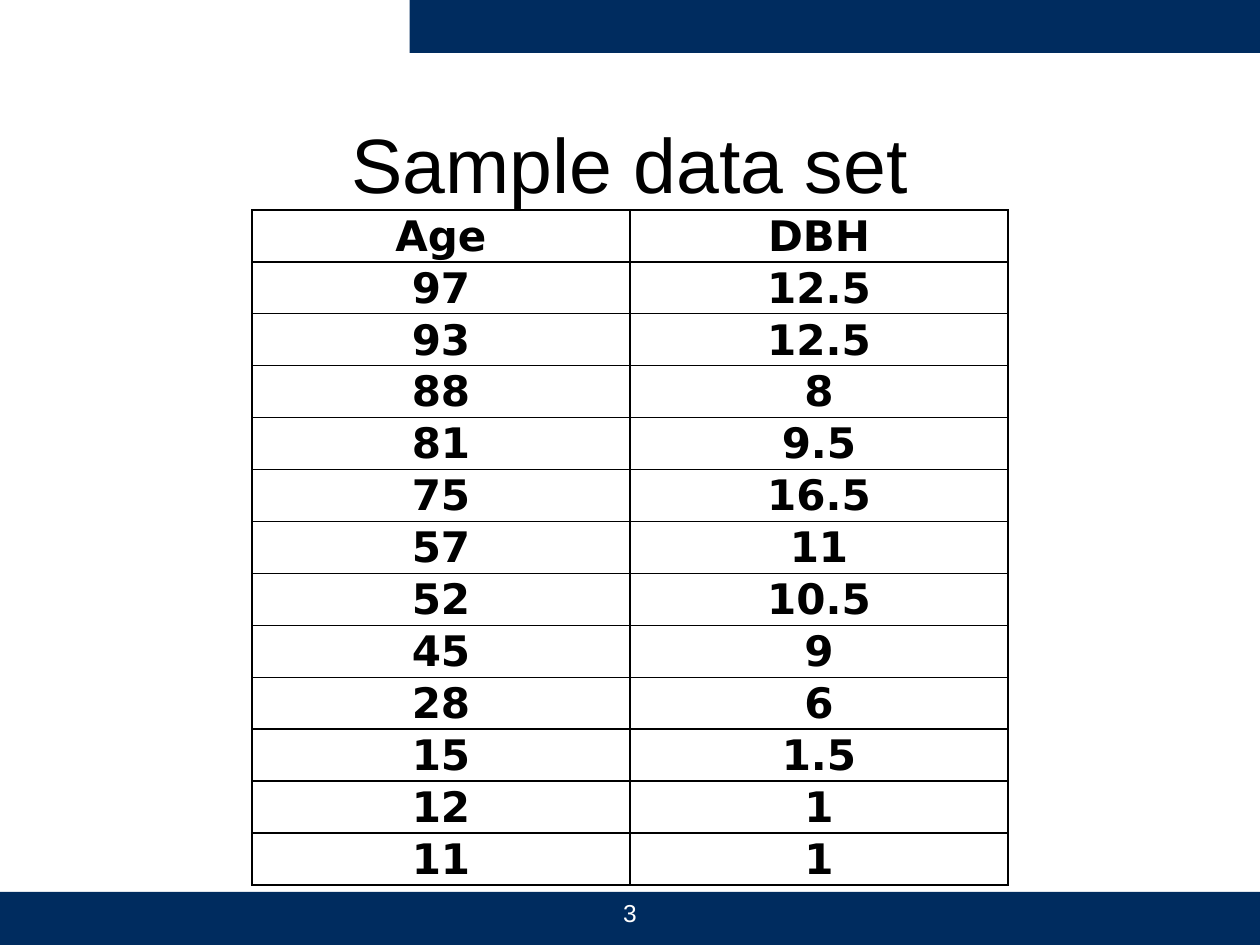
from dataclasses import dataclass

import pptx
import pptx.dml.color
import pptx.enum.shapes
import pptx.enum.text
import pptx.oxml
import pptx.oxml.ns
import pptx.util
from pptx.dml.color import RGBColor
from pptx.util import Cm

NAVY = RGBColor(0x00, 0x2C, 0x5F)
BLACK = RGBColor(0x00, 0x00, 0x00)
WHITE = RGBColor(0xFF, 0xFF, 0xFF)

SLIDE_W, SLIDE_H = Cm(25.4), Cm(19.05)
BAND_H = Cm(1.07)
COL_W, ROW_H = Cm(7.62), Cm(1.02)

SAMPLES = [
    ("Age", "DBH"),
    ("97", "12.5"),
    ("93", "12.5"),
    ("88", "8"),
    ("81", "9.5"),
    ("75", "16.5"),
    ("57", "11"),
    ("52", "10.5"),
    ("45", "9"),
    ("28", "6"),
    ("15", "1.5"),
    ("12", "1"),
    ("11", "1"),
]


@dataclass
class Band:
    left: int
    top: int
    width: int


BANDS = [
    Band(Cm(8.26), 0, SLIDE_W - Cm(8.26)),
    Band(0, SLIDE_H - BAND_H, SLIDE_W),
]


def draw_band(s, band: Band) -> None:
    sp = s.shapes.add_shape(pptx.enum.shapes.MSO_SHAPE.RECTANGLE,
                            band.left, band.top, band.width, BAND_H)
    sp.shadow.inherit = False
    sp.fill.solid()
    sp.fill.fore_color.rgb = NAVY
    sp.line.fill.background()


def write(tf, text: str, *, size: float, font: str = "Arial",
          color: RGBColor = BLACK, bold: bool = False) -> None:
    """Put one centred run of text in a text frame."""
    p = tf.paragraphs[0]
    p.alignment = pptx.enum.text.PP_ALIGN.CENTER
    r = p.add_run()
    r.text = text
    r.font.size = pptx.util.Pt(size)
    r.font.name = font
    r.font.bold = bold
    r.font.color.rgb = color


def add_text(s, text: str, left: int, top: int, width: int, height: int,
             anchor, **text_format) -> None:
    tf = s.shapes.add_textbox(left, top, width, height).text_frame
    tf.word_wrap = True
    tf.vertical_anchor = anchor
    write(tf, text, **text_format)


def set_borders(cell) -> None:
    """Draw a 1 pt black line on all four sides of a cell."""
    tc_pr = cell._tc.get_or_add_tcPr()
    for i, side in enumerate(("lnL", "lnR", "lnT", "lnB")):
        tc_pr.insert(i, pptx.oxml.parse_xml(
            f'<a:{side} {pptx.oxml.ns.nsdecls("a")} w="{pptx.util.Pt(1)}">'
            f'<a:solidFill><a:srgbClr val="{BLACK}"/></a:solidFill></a:{side}>'))


def draw_table(s, rows: list[tuple[str, str]], left: int, top: int) -> None:
    n_cols = len(rows[0])
    table = s.shapes.add_table(len(rows), n_cols, left, top,
                               COL_W * n_cols, ROW_H * len(rows)).table
    table.first_row = table.horz_banding = False
    for col in table.columns:
        col.width = COL_W
    for row, values in zip(table.rows, rows):
        row.height = ROW_H
        for cell, value in zip(row.cells, values):
            cell.fill.background()
            cell.margin_left = cell.margin_right = cell.margin_top = Cm(0.03)
            cell.margin_bottom = 0
            cell.vertical_anchor = pptx.enum.text.MSO_ANCHOR.MIDDLE
            write(cell.text_frame, value, size=24, font="DejaVu Sans", bold=True)
            set_borders(cell)


def main() -> None:
    prs = pptx.Presentation()
    prs.slide_width, prs.slide_height = SLIDE_W, SLIDE_H
    s = prs.slides.add_slide(prs.slide_layouts[6])
    for band in BANDS:
        draw_band(s, band)
    add_text(s, "Sample data set", Cm(1.9), Cm(1.7), Cm(21.6), Cm(3.18),
             pptx.enum.text.MSO_ANCHOR.MIDDLE, size=44)
    draw_table(s, SAMPLES, Cm(5.08), Cm(4.23))
    add_text(s, "3", Cm(11.22), SLIDE_H - BAND_H, Cm(2.96), Cm(0.85),
             pptx.enum.text.MSO_ANCHOR.TOP, size=14, color=WHITE)
    prs.save("out.pptx")


if __name__ == "__main__":
    main()
